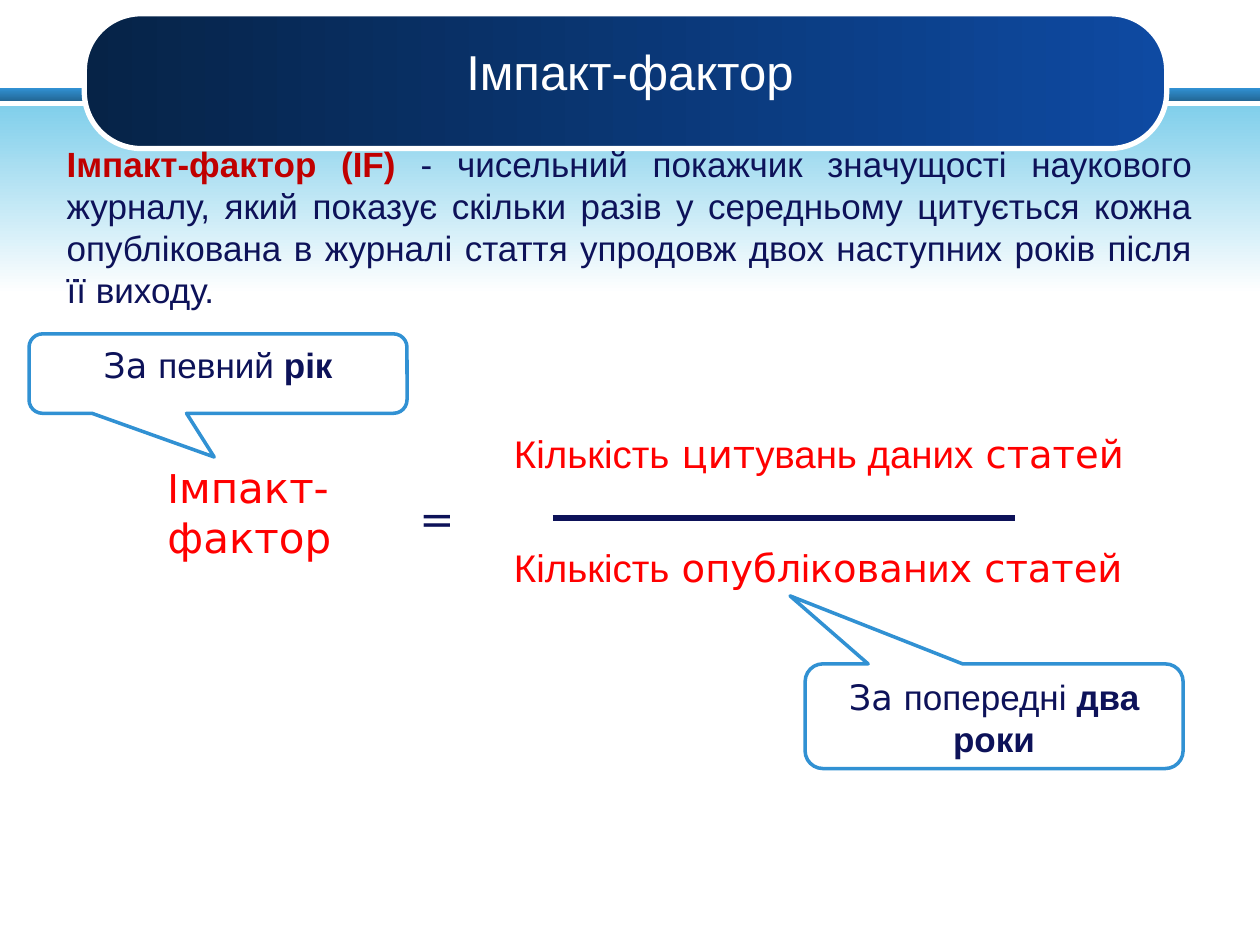
from dataclasses import dataclass
from typing import NamedTuple

import pptx
import pptx.dml.color
import pptx.enum.shapes
import pptx.enum.text
import pptx.util
from lxml import etree

Pt = pptx.util.Pt
Rgb = pptx.dml.color.RGBColor.from_string
Kind = pptx.enum.shapes.MSO_SHAPE
Align = pptx.enum.text.PP_ALIGN
Anchor = pptx.enum.text.MSO_ANCHOR


@dataclass(frozen=True)
class Theme:
    sans: str = "Arial"
    wide: str = "DejaVu Sans"
    white: str = "FFFFFF"
    navy: str = "0D1259"
    red: str = "FF0000"
    dark: str = "C00000"
    blue: str = "3191D3"
    steel: str = "236897"
    sky: str = "81CFEB"
    deep: str = "062347"
    royal: str = "0E4AA2"
    title: float = 28
    term: float = 24
    ratio: float = 22
    body: float = 20


T = Theme()


class Box(NamedTuple):
    left: float
    top: float
    width: float
    height: float


class Run(NamedTuple):
    text: str
    color: str
    face: str = T.sans
    bold: bool = False


class Label(NamedTuple):
    box: Box
    size: float
    runs: list[Run]
    align: Align = Align.LEFT
    anchor: Anchor = Anchor.TOP


class Band(NamedTuple):
    kind: Kind
    box: Box
    stops: tuple[str, str]
    angle: float
    adjust: tuple[float, ...] = ()
    edge: str = ""


class Callout(NamedTuple):
    label: Label
    adjust: tuple[float, ...]


def mix(color: str, *parts: tuple[str, str]) -> list[Run]:
    """Make runs of one colour from (text, face) pairs."""
    return [Run(text, color, face) for text, face in parts]


def note(tail: str, bold: str) -> list[Run]:
    return [*mix(T.navy, ("За ", T.wide), (tail, T.sans)),
            Run(bold, T.navy, bold=True)]


BANDS = [
    Band(Kind.RECTANGLE, Box(0, 50.4, 720, 7.2), (T.blue, T.steel), 270),
    Band(Kind.RECTANGLE, Box(0, 60.5, 720, 107.3), (T.sky, T.white), 270),
    Band(Kind.ROUNDED_RECTANGLE, Box(48.2, 7.9, 618.5, 77), (T.deep, T.royal),
         0, (0.42,), T.white),
]

LABELS = [
    Label(Box(54, 7.9, 612, 65.5), T.title, [Run("Імпакт-фактор", T.white)],
          Align.CENTER, Anchor.MIDDLE),
    Label(Box(88.6, 260, 120.2, 64.8), T.term,
          mix(T.red, ("І", T.sans), ("мпакт-фактор", T.wide))),
    Label(Box(232.6, 278, 54, 36), T.term, mix(T.navy, ("=", T.wide))),
    Label(Box(286.6, 242, 401.8, 33.8), T.ratio,
          mix(T.red, ("Кількість", T.sans), (" цит", T.wide),
              ("увань даних", T.sans), (" статей", T.wide))),
    Label(Box(286.6, 307.5, 378, 33.8), T.ratio,
          mix(T.red, ("Кількість", T.sans), (" опубл", T.wide), ("і", T.sans),
              ("кован", T.wide), ("и", T.sans), ("х статей", T.wide))),
    Label(Box(31, 77, 657.4, 104.4), T.body,
          [Run("Імпакт-фактор (IF) ", T.dark, bold=True),
           Run("- чисельний покажчик значущості наукового журналу, який "
               "показує скільки разів у середньому цитується кожна "
               "опублікована в журналі стаття упродовж двох наступних років "
               "після її виходу.", T.navy)],
          Align.JUSTIFY, Anchor.MIDDLE),
]

CALLOUTS = [
    Callout(Label(Box(16.6, 190.8, 216, 45.4), T.body,
                  note("певний ", "рік"), Align.CENTER), (-0.01, 1.05, 0.17)),
    Callout(Label(Box(460.1, 379.4, 216, 59.8), T.body,
                  note("попередні ", "два роки"), Align.CENTER),
            (-0.54, -1.15, 0.17)),
]


def style(item, form: dict) -> None:
    for name, value in form.items():
        setattr(item, name, value)


def write(shape, label: Label) -> None:
    style(shape.text_frame,
          {"word_wrap": True, "vertical_anchor": label.anchor})
    para = shape.text_frame.paragraphs[0]
    para.alignment = label.align
    for part in label.runs:
        run = para.add_run()
        run.text = part.text
        style(run.font, {"name": part.face, "size": Pt(label.size),
                         "bold": part.bold})
        run.font.color.rgb = Rgb(part.color)


def stroke(line, color: str, width: float) -> None:
    line.color.rgb = Rgb(color)
    line.width = Pt(width)


def form(slide, kind: Kind, box: Box, adjust: tuple[float, ...]):
    """Add a shadowless preset shape."""
    shape = slide.shapes.add_shape(kind, *map(Pt, box))
    shape.shadow.inherit = False
    for i, value in enumerate(adjust):
        shape.adjustments[i] = value
    return shape


def draw_band(slide, band: Band) -> None:
    shape = form(slide, band.kind, band.box, band.adjust)
    shape.fill.gradient()
    shape.fill.gradient_angle = band.angle
    for stop, color in zip(shape.fill.gradient_stops, band.stops):
        stop.color.rgb = Rgb(color)
    if band.edge:
        stroke(shape.line, band.edge, 3)
    else:
        shape.line.fill.background()


def draw_label(slide, label: Label) -> None:
    write(slide.shapes.add_textbox(*map(Pt, label.box)), label)


def draw_callout(slide, callout: Callout) -> None:
    shape = form(slide, Kind.ROUNDED_RECTANGULAR_CALLOUT, callout.label.box,
                 callout.adjust)
    shape.fill.solid()
    shape.fill.fore_color.rgb = Rgb(T.white)
    stroke(shape.line, T.blue, 2)
    write(shape, callout.label)


def draw_rule(slide, left: float, right: float, top: float) -> None:
    rule = slide.shapes.add_connector(
        pptx.enum.shapes.MSO_CONNECTOR.STRAIGHT,
        Pt(left), Pt(top), Pt(right), Pt(top))
    stroke(rule.line, T.navy, 3)
    etree.SubElement(rule._element.spPr, pptx.oxml.ns.qn("a:effectLst"))


def main() -> None:
    deck = pptx.Presentation()
    style(deck, {"slide_width": Pt(720), "slide_height": Pt(540)})
    slide = deck.slides.add_slide(deck.slide_layouts[6])
    for band in BANDS:
        draw_band(slide, band)
    for label in LABELS:
        draw_label(slide, label)
    draw_rule(slide, 316, 580.3, 296)
    for callout in CALLOUTS:
        draw_callout(slide, callout)
    deck.save("out.pptx")


if __name__ == "__main__":
    main()
